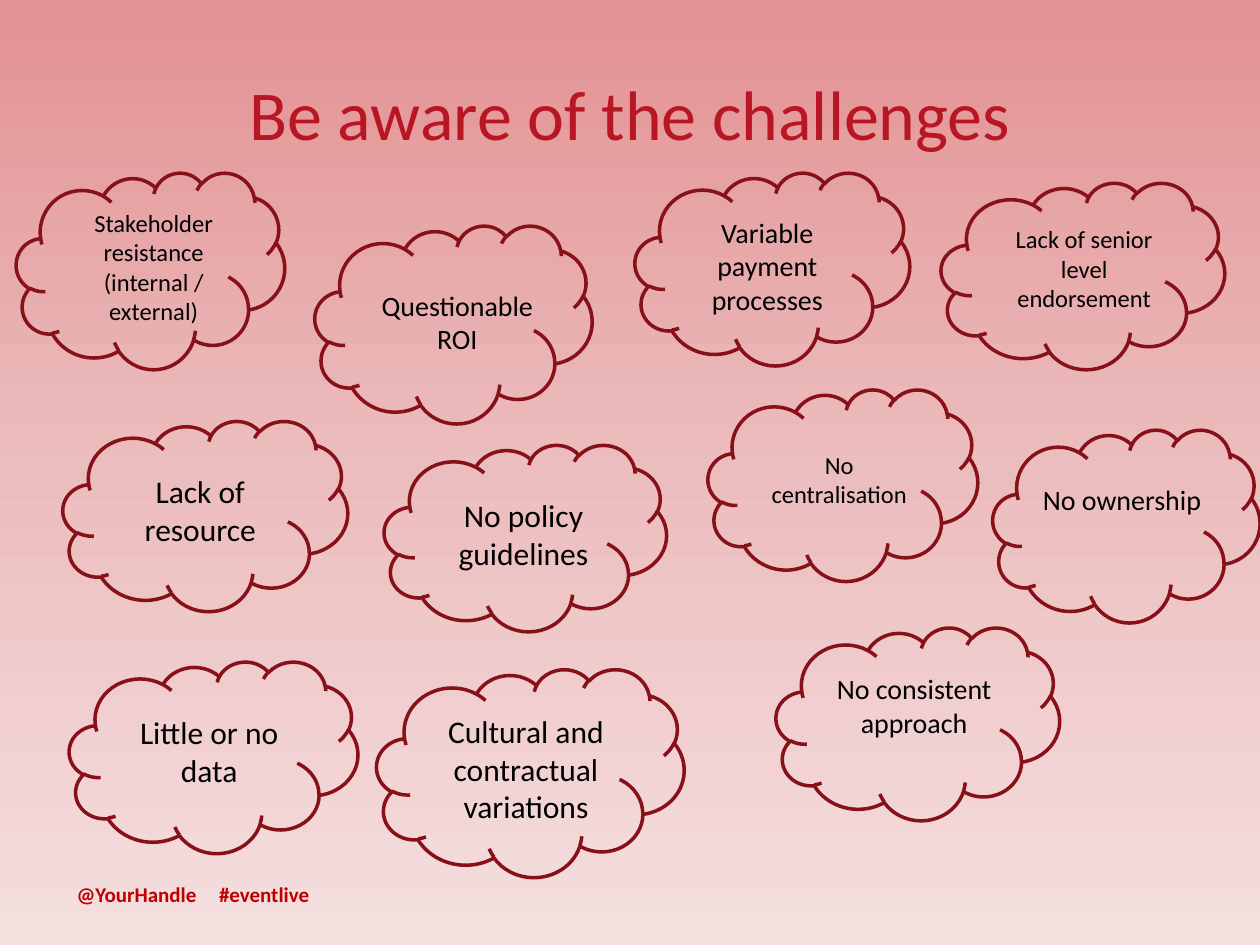
from copy import deepcopy

from lxml.etree import SubElement
from pptx import Presentation
from pptx.dml.color import RGBColor
from pptx.enum.shapes import MSO_SHAPE
from pptx.enum.text import MSO_ANCHOR, MSO_AUTO_SIZE, PP_ALIGN
from pptx.oxml.ns import qn
from pptx.util import Inches, Pt

COLUMNS, ROWS = 100, 75

CHALLENGES = [
    ((1.3, 13.7, 21.3, 15.6), (5, 16, 14.4, 10.4), 14,
     ["Stakeholder resistance", "(internal / external)"]),
    ((5.5, 52.5, 22.9, 15.2), (9.2, 56.1, 14.8, 7.1), 18, ["Little or no data"]),
    ((30.5, 35.3, 22.4, 14.8), (33.8, 38.9, 15.5, 7.1), 18, ["No policy guidelines"]),
    ((25, 17.9, 22, 15.7), (27.8, 22.4, 17, 6.4), 16, ["Questionable ROI"]),
    ((56.2, 30.9, 21.4, 15.2), (59, 35.2, 15.2, 5.7), 14, ["No centralisation"]),
    ((50.4, 13.7, 21.8, 15.3), (53.9, 16.6, 14, 9.1), 16, ["Variable payment processes"]),
    ((61.6, 49.8, 22.5, 15.3), (65.3, 52.8, 14.5, 9.1), 16, ["No consistent approach"]),
    ((74.7, 14.5, 22.5, 14.8), (78.4, 17.3, 15.3, 8.1), 14, ["Lack of senior level endorsement"]),
    ((5, 33.4, 22.6, 15.1), (7.9, 37, 16, 7.1), 18, ["Lack of resource"]),
    ((29.9, 53.1, 24.4, 16.5), (33.1, 56, 17.3, 10.1), 18, ["Cultural and contractual variations"]),
    ((78.8, 34.1, 21.2, 15.3), (81.5, 37.8, 15.1, 6.4), 16, ["No ownership"]),
]


def color(hex_value):
    return RGBColor.from_string(hex_value)


class CloudSlide:
    font_name = "Calibri"
    outline = "881019"

    def __init__(self, deck):
        self.slide = deck.slides.add_slide(deck.slide_layouts[6])
        self.column = deck.slide_width / COLUMNS
        self.row = deck.slide_height / ROWS

    def place(self, area):
        left, top, width, height = area
        return (round(left * self.column), round(top * self.row),
                round(width * self.column), round(height * self.row))

    def background(self, shades):
        fill = self.slide.background.fill
        fill.gradient()
        fill.gradient_angle = 270
        stop_list = self.slide.element.find(".//" + qn("a:gsLst"))
        while len(stop_list) < len(shades):
            stop_list.append(deepcopy(stop_list[0]))
        for index, (stop, shade) in enumerate(zip(fill.gradient_stops, shades)):
            stop.color.rgb = color(shade)
            stop.position = index / (len(shades) - 1)

    def text(self, area, lines, size, shade="000000", align=PP_ALIGN.CENTER,
             bold=False, anchor=MSO_ANCHOR.TOP, tab=None, parent=None):
        box = (parent or self.slide).shapes.add_textbox(*self.place(area))
        frame = box.text_frame
        frame.word_wrap = True
        frame.auto_size = MSO_AUTO_SIZE.NONE
        frame.vertical_anchor = anchor
        frame.text = "\n".join(lines)
        for paragraph in frame.paragraphs:
            paragraph.alignment = align
            if tab:
                tabs = SubElement(paragraph._p.get_or_add_pPr(), qn("a:tabLst"))
                SubElement(tabs, qn("a:tab"), pos=str(round(tab * self.column)), algn="l")
            paragraph.font.name = self.font_name
            paragraph.font.size = Pt(size)
            paragraph.font.bold = bold
            paragraph.font.color.rgb = color(shade)

    def cloud(self, area, label_area, size, lines):
        group = self.slide.shapes.add_group_shape()
        outline = group.shapes.add_shape(MSO_SHAPE.CLOUD, *self.place(area))
        outline.shadow.inherit = False
        outline.fill.background()
        outline.line.color.rgb = color(self.outline)
        outline.line.width = Pt(2)
        self.text(label_area, lines, size, parent=group)


def main():
    deck = Presentation()
    deck.slide_width, deck.slide_height = Inches(10), Inches(7.5)
    page = CloudSlide(deck)
    page.background(["E39192", "ECBDBE", "F5DFDF"])
    page.text((5.1, 69.5, 20.8, 3), ["@YourHandle\t#eventlive"], 12, "C00000",
              align=PP_ALIGN.LEFT, bold=True, tab=11.3)
    page.text((5, 4.7, 90, 8.5), ["Be aware of the challenges"], 40, "B81622",
              anchor=MSO_ANCHOR.MIDDLE)
    for challenge in CHALLENGES:
        page.cloud(*challenge)
    deck.save("out.pptx")


if __name__ == "__main__":
    main()
